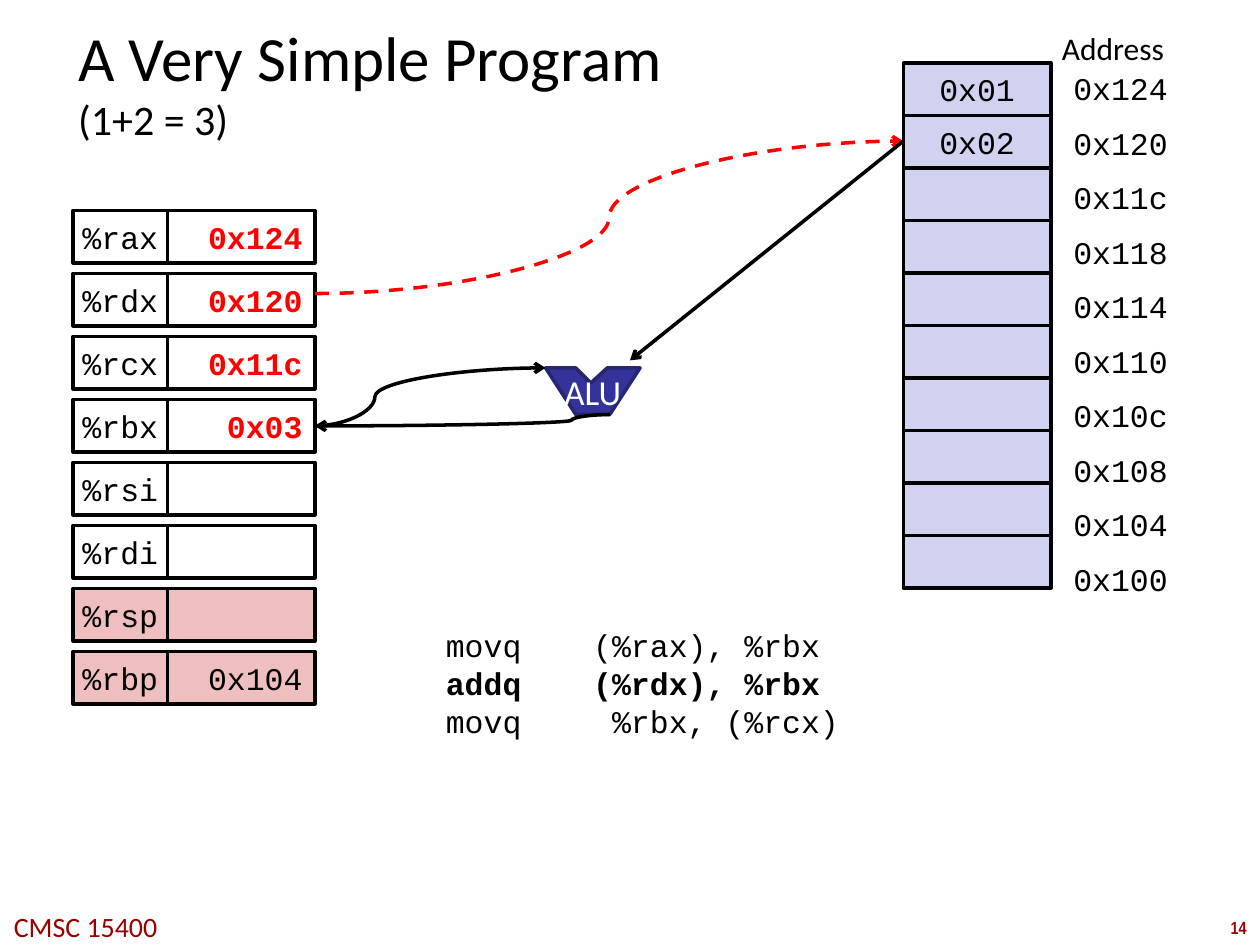
from pptx import Presentation
from pptx.dml.color import RGBColor
from pptx.enum import dml, shapes, text
from pptx.oxml.ns import qn
from pptx.util import Inches, Pt
from lxml import etree

BLACK = RGBColor(0x00, 0x00, 0x00)
WHITE = RGBColor(0xFF, 0xFF, 0xFF)
RED = RGBColor(0xFF, 0x00, 0x00)
MAROON = RGBColor(0x99, 0x00, 0x00)
PINK = RGBColor(0xEF, 0xBF, 0xBF)
LAVENDER = RGBColor(0xD1, 0xD1, 0xF0)
INDIGO = RGBColor(0x33, 0x33, 0x99)
DARK_INDIGO = RGBColor(0x26, 0x26, 0x71)
SANS, MONO = "Calibri", "Courier New"
LEFT, CENTER, RIGHT = text.PP_ALIGN.LEFT, text.PP_ALIGN.CENTER, text.PP_ALIGN.RIGHT

TITLE = "A Very Simple Program\v(1+2 = 3)"
REGISTERS = [  # name, value, fill, value colour
    ("%rax", "0x124", WHITE, RED),
    ("%rdx", "0x120", WHITE, RED),
    ("%rcx", "0x11c", WHITE, RED),
    ("%rbx", "0x03", WHITE, RED),
    ("%rsi", "", WHITE, BLACK),
    ("%rdi", "", WHITE, BLACK),
    ("%rsp", "", PINK, BLACK),
    ("%rbp", "0x104", PINK, BLACK),
]
MEMORY = [
    ("0x124", "0x01"), ("0x120", "0x02"), ("0x11c", ""), ("0x118", ""),
    ("0x114", ""), ("0x110", ""), ("0x10c", ""), ("0x108", ""),
    ("0x104", ""), ("0x100", ""),
]
CODE = [  # line, is being executed
    ("\tmovq\t  (%rax), %rbx", False),
    ("\taddq\t  (%rdx), %rbx", True),
    ("\tmovq\t   %rbx, (%rcx)", False),
]
CODE_TABS = [0.44, 1.31, 3.69]
ALU = [(4.33, 2.92), (4.57, 3.29), (4.84, 3.29), (5.08, 2.92),
       (4.82, 2.92), (4.69, 3.04), (4.57, 2.92)]
CURVE, STRAIGHT = shapes.MSO_CONNECTOR.CURVE, shapes.MSO_CONNECTOR.STRAIGHT
ARROWS = [  # kind, from, to, colour, dashed, bend position
    (CURVE, (2.5, 2.33), (7.17, 1.12), RED, True, 0.5),
    (STRAIGHT, (7.17, 1.12), (5, 2.86), BLACK, False, None),
    (CURVE, (2.5, 3.38), (4.33, 2.92), BLACK, False, 0.26),
    (CURVE, (4.84, 3.29), (2.5, 3.38), BLACK, False, 0.13),
]
CELL_HEIGHT = 5 / 12
REGISTER_LEFT, REGISTER_TOP, REGISTER_STEP = 0.58, 1.67, 0.5
NAME_WIDTH, VALUE_WIDTH = 0.75, 1.17
MEMORY_LEFT, MEMORY_TOP = 7.17, 0.5
ADDRESS_LEFT, ADDRESS_STEP = 8.42, 0.4325


def style(para, size, font, color, bold=False, align=LEFT):
    para.alignment = align
    for span in para.runs:
        span.font.size, span.font.name = Pt(size), font
        span.font.bold, span.font.color.rgb = bold, color


def paint(shape, fill, line):
    shape.shadow.inherit = False
    shape.fill.solid()
    shape.fill.fore_color.rgb = fill
    shape.line.color.rgb = line
    shape.line.width = Pt(2)


def add_cell(page, left, top, width, fill, words, align=CENTER, color=BLACK):
    cell = page.shapes.add_shape(
        shapes.MSO_SHAPE.RECTANGLE, *map(Inches, (left, top, width, CELL_HEIGHT)))
    paint(cell, fill, BLACK)
    if words:
        frame = cell.text_frame
        frame.text, frame.word_wrap = words, False
        frame.vertical_anchor = text.MSO_ANCHOR.MIDDLE
        style(frame.paragraphs[0], 18, MONO, color, color == RED, align)


def add_label(page, place, words, size, font, color=BLACK, wrap=False, **look):
    box = page.shapes.add_textbox(*map(Inches, place))
    box.text_frame.word_wrap = wrap
    box.text_frame.text = words
    style(box.text_frame.paragraphs[0], size, font, color, **look)


def add_arrow(page, kind, start, end, color, dashed, bend):
    arrow = page.shapes.add_connector(kind, *map(Inches, start + end))
    arrow.line.color.rgb = color
    arrow.line.width = Pt(2)
    if dashed:
        arrow.line.dash_style = dml.MSO_LINE.DASH
    properties = arrow.element.spPr
    etree.SubElement(properties.find(qn("a:ln")), qn("a:tailEnd"), type="arrow")
    etree.SubElement(properties, qn("a:effectLst"))
    if bend is not None:
        guides = properties.find(qn("a:prstGeom")).find(qn("a:avLst"))
        etree.SubElement(guides, qn("a:gd"), name="adj1", fmla=f"val {round(bend * 100000)}")


def add_title(page):
    title = page.shapes.title
    title.left, title.top, title.width, title.height = map(Inches, (0.58, 0.33, 6.97, 0.63))
    frame = title.text_frame
    frame.text = TITLE
    frame.auto_size = text.MSO_AUTO_SIZE.NONE
    frame.vertical_anchor = text.MSO_ANCHOR.MIDDLE
    frame.margin_left = frame.margin_right = Inches(0.04)
    frame.margin_top = frame.margin_bottom = Inches(0.04)
    style(frame.paragraphs[0], 36, SANS, BLACK)
    frame.paragraphs[0].runs[1].font.size = Pt(24)


def add_memory(page):
    for row, (address, value) in enumerate(MEMORY):
        add_cell(page, MEMORY_LEFT, MEMORY_TOP + row * CELL_HEIGHT, VALUE_WIDTH, LAVENDER, value)
        add_label(page, (ADDRESS_LEFT, MEMORY_TOP + row * ADDRESS_STEP, 1.33, 0.4),
                  address, 18, MONO, wrap=True)
    add_label(page, (8.33, 0.18, 1.04, 0.4), "Address", 18, SANS)


def add_registers(page):
    for row, (name, value, fill, color) in enumerate(REGISTERS):
        top = REGISTER_TOP + row * REGISTER_STEP
        add_cell(page, REGISTER_LEFT, top, NAME_WIDTH, fill, name)
        add_cell(page, REGISTER_LEFT + NAME_WIDTH, top, VALUE_WIDTH, fill, value, RIGHT, color)


def add_alu(page):
    points = [(Inches(x), Inches(y)) for x, y in ALU]
    builder = page.shapes.build_freeform(*points[0])
    builder.add_line_segments(points[1:], close=True)
    alu = builder.convert_to_shape()
    paint(alu, INDIGO, DARK_INDIGO)
    alu.text_frame.text = "ALU"
    alu.text_frame.vertical_anchor = text.MSO_ANCHOR.MIDDLE
    style(alu.text_frame.paragraphs[0], 20, SANS, WHITE, align=CENTER)


def add_code(page):
    frame = page.shapes.add_textbox(*map(Inches, (3, 4.92, 6.5, 1.31))).text_frame
    frame.word_wrap = True
    for number, (line, current) in enumerate(CODE):
        para = frame.add_paragraph() if number else frame.paragraphs[0]
        para.text = line
        stops = etree.SubElement(para._p.get_or_add_pPr(), qn("a:tabLst"))
        for stop in CODE_TABS:
            etree.SubElement(stops, qn("a:tab"), pos=str(Inches(stop)), algn="l")
        style(para, 18, MONO, BLACK, current)


def main():
    deck = Presentation()
    deck.slide_width, deck.slide_height = Inches(10), Inches(7.5)
    page = deck.slides.add_slide(deck.slide_layouts[5])
    add_label(page, (9.66, 7.23, 0.34, 0.27), "14", 10, "Arial Narrow", MAROON,
              bold=True, align=CENTER)
    add_label(page, (-0.03, 7.17, 1.42, 0.37), "CMSC 15400", 16, SANS, MAROON, align=CENTER)
    add_title(page)
    add_memory(page)
    add_registers(page)
    add_alu(page)
    add_code(page)
    for arrow in ARROWS:
        add_arrow(page, *arrow)
    deck.save("out.pptx")


if __name__ == "__main__":
    main()
